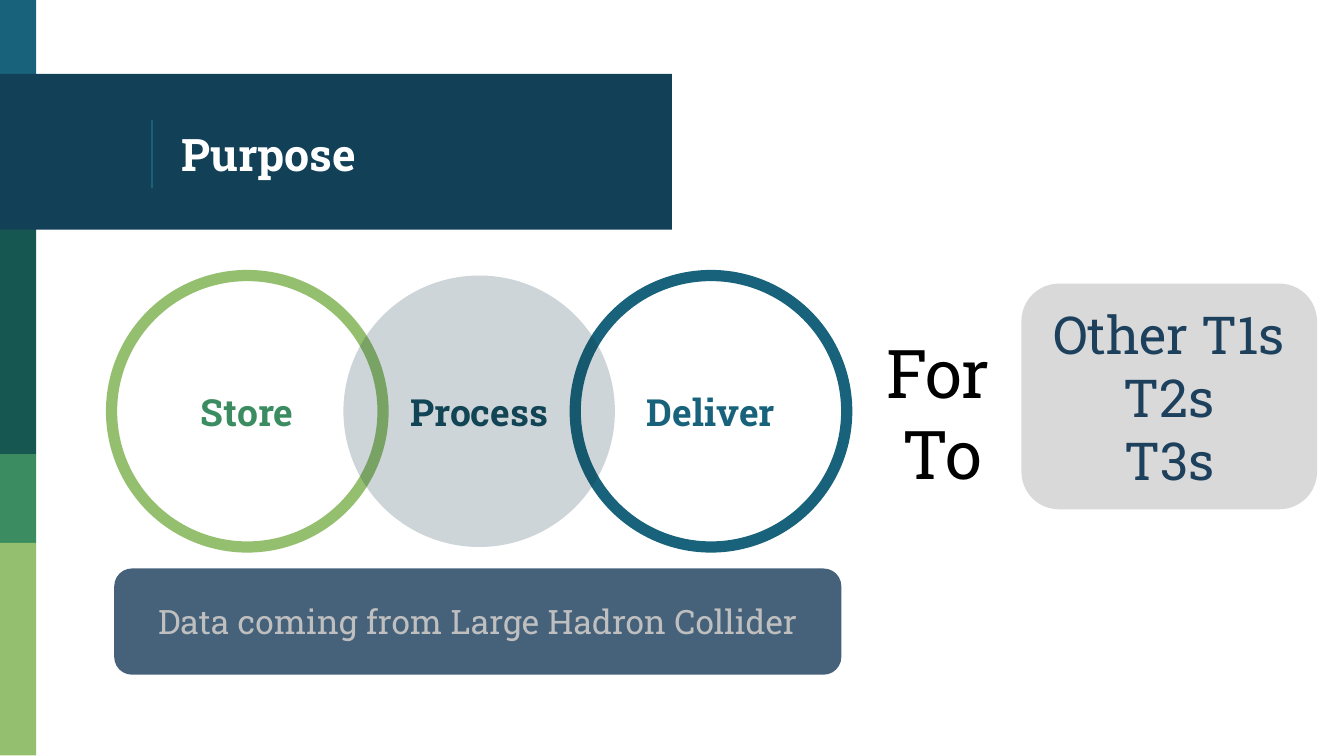
from dataclasses import dataclass

from lxml.etree import SubElement
from pptx import Presentation
from pptx.dml.color import RGBColor
from pptx.enum.shapes import MSO_CONNECTOR, MSO_SHAPE
from pptx.enum.text import MSO_ANCHOR as Anchor, PP_ALIGN as Align
from pptx.oxml.ns import qn
from pptx.shapes.autoshape import Shape
from pptx.slide import Slide
from pptx.util import Inches, Pt

FONT = "Roboto Slab"
NAVY, TEAL, LIME, GREEN = "124057", "18637B", "94BF6E", "3B8D61"
SLATE = "1D405D"
FIRST_CIRCLE, LAST_CIRCLE = 0.83, 4.28
CIRCLE_PITCH = (LAST_CIRCLE - FIRST_CIRCLE) / 2


@dataclass
class Style:
    size: int
    color: str
    bold: bool = False


@dataclass
class Block:
    kind: MSO_SHAPE
    left: float
    top: float
    width: float
    height: float
    fill: str | None = None
    opacity: int = 100
    outline: str | None = None


@dataclass
class Circle:
    label: str
    column: int
    text_color: str
    fill: str | None = None
    opacity: int = 100
    outline: str | None = None


def rgb(color: str) -> RGBColor:
    return RGBColor.from_string(color)


def write(box: Shape, lines: list[str], style: Style,
          aligns: list[Align], inset: float = 0.1) -> None:
    """Fill the box with one paragraph per line, centred vertically."""
    frame = box.text_frame
    frame.word_wrap = True
    frame.vertical_anchor = Anchor.MIDDLE
    frame.margin_left = frame.margin_right = Inches(0.1)
    frame.margin_top = frame.margin_bottom = Inches(inset)
    for index, (line, align) in enumerate(zip(lines, aligns)):
        para = frame.paragraphs[0] if index == 0 else frame.add_paragraph()
        para.alignment = align
        span = para.add_run()
        span.text = line
        span.font.name = FONT
        span.font.size = Pt(style.size)
        span.font.bold = style.bold
        span.font.color.rgb = rgb(style.color)


def draw_block(page: Slide, block: Block) -> Shape:
    shape = page.shapes.add_shape(
        block.kind, Inches(block.left), Inches(block.top),
        Inches(block.width), Inches(block.height))
    shape.shadow.inherit = False
    if block.fill:
        shape.fill.solid()
        shape.fill.fore_color.rgb = rgb(block.fill)
        if block.opacity < 100:
            color = shape.element.spPr.find(qn("a:solidFill"))[0]
            SubElement(color, qn("a:alpha"), val=str(block.opacity * 1000))
    else:
        shape.fill.background()
    if block.outline:
        shape.line.color.rgb = rgb(block.outline)
        shape.line.width = Pt(6)
    else:
        shape.line.fill.background()
    return shape


def draw_circle(page: Slide, circle: Circle) -> None:
    left = FIRST_CIRCLE + CIRCLE_PITCH * circle.column
    block = Block(MSO_SHAPE.OVAL, left, 2.05, 2.02, 2.02,
                  circle.fill, circle.opacity, circle.outline)
    write(draw_block(page, block), [circle.label],
          Style(20, circle.text_color, True), [Align.CENTER])


def draw_frame(page: Slide) -> None:
    """Draw the side stripe, the title band and its thin divider."""
    stripe = [(0, 0.58, TEAL), (1.7, 1.68, "165751"),
              (3.38, 0.66, GREEN), (4.04, 1.58, LIME)]
    for top, height, color in stripe:
        draw_block(page, Block(MSO_SHAPE.RECTANGLE, 0, top, 0.27, height, color))
    draw_block(page, Block(MSO_SHAPE.RECTANGLE, 0, 0.55, 5, 1.16, NAVY))
    divider = page.shapes.add_connector(
        MSO_CONNECTOR.STRAIGHT, Inches(1.13), Inches(0.89), Inches(1.13), Inches(1.4))
    divider.line.color.rgb = rgb(TEAL)
    divider.line.width = Pt(0.75)
    SubElement(divider.element.spPr, qn("a:effectLst"))


def draw_title(page: Slide) -> None:
    title = page.shapes.title
    title.left, title.top = Inches(1.25), Inches(0.58)
    title.width, title.height = Inches(3.51), Inches(1.12)
    write(title, ["Purpose"], Style(24, "FFFFFF", True), [Align.LEFT])
    # Bring the title in front of the band
    title.element.getparent().append(title.element)


def main() -> None:
    deck = Presentation()
    deck.slide_width = Inches(10)
    deck.slide_height = deck.slide_width * 9 // 16
    page = deck.slides.add_slide(deck.slide_layouts[5])

    draw_frame(page)
    draw_title(page)

    circles = [
        Circle("Store", 0, GREEN, outline=LIME),
        Circle("Deliver", 2, TEAL, outline=TEAL),
        Circle("Process", 1, "114454", fill="0E3142", opacity=20),
    ]
    for circle in circles:
        draw_circle(page, circle)

    source = draw_block(page, Block(MSO_SHAPE.ROUNDED_RECTANGLE,
                                    0.85, 4.23, 5.41, 0.79, SLATE, 82))
    write(source, ["Data coming from Large Hadron Collider"],
          Style(18, "BFBFBF"), [Align.CENTER], 0.05)

    link = page.shapes.add_textbox(Inches(6.5), Inches(2.41), Inches(1.02), Inches(1.31))
    write(link, ["For", "To"], Style(36, "000000"), [Align.LEFT, Align.CENTER], 0.05)

    targets = draw_block(page, Block(MSO_SHAPE.ROUNDED_RECTANGLE,
                                     7.6, 2.11, 2.2, 1.68, "D9D9D9"))
    write(targets, ["Other T1s", "T2s", "T3s"], Style(28, SLATE),
          [Align.CENTER] * 3, 0.05)

    deck.save("out.pptx")


if __name__ == "__main__":
    main()
